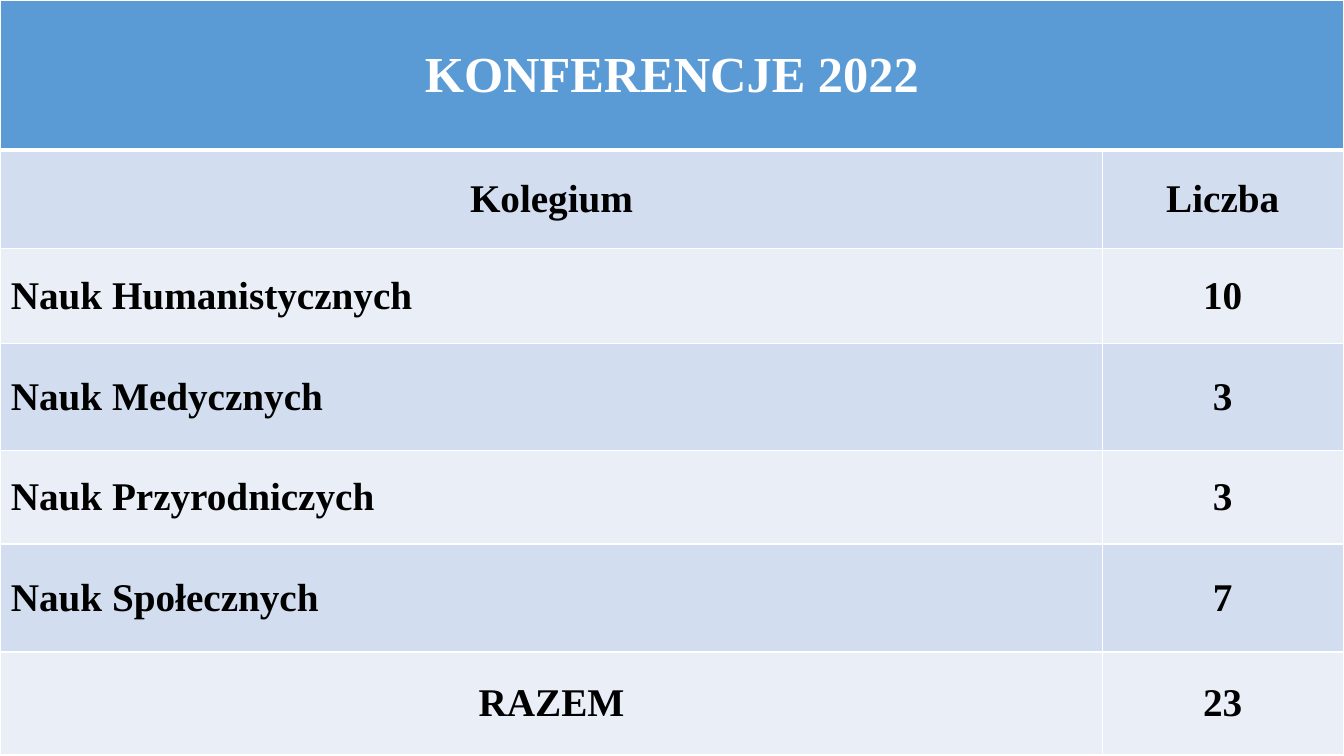
import dataclasses

import lxml.etree
import pptx
import pptx.dml.color
import pptx.enum.text
import pptx.oxml.ns
import pptx.util


@dataclasses.dataclass(frozen=True)
class Theme:
    """Colours, font and sizes of the slide."""
    font: str = "Times New Roman"
    title_size: int = 36
    body_size: int = 28
    title_fill: str = "5B9BD5"
    band_fills: tuple = ("D2DEEF", "EAEFF7")
    title_text: str = "FFFFFF"
    body_text: str = "000000"
    border: str = "FFFFFF"
    thin_border: int = 1
    thick_border: int = 3


THEME = Theme()
TITLE = "KONFERENCJE 2022"
ROWS = [
    ("Kolegium", "Liczba"),
    ("Nauk Humanistycznych", "10"),
    ("Nauk Medycznych", "3"),
    ("Nauk Przyrodniczych", "3"),
    ("Nauk Społecznych", "7"),
    ("RAZEM", "23"),
]
COLUMN_SHARES = (10.93, 2.39)
ROW_SHARES = (1.49, 0.98, 0.94, 1.06, 0.93, 1.07, 1.02)


def set_borders(cell, top, bottom):
    """Draw the four borders of a cell, with top and bottom widths in points."""
    properties = cell._tc.get_or_add_tcPr()
    widths = {"lnL": THEME.thin_border, "lnR": THEME.thin_border, "lnT": top, "lnB": bottom}
    for tag, width in widths.items():
        line = lxml.etree.SubElement(properties, pptx.oxml.ns.qn(f"a:{tag}"), w=str(pptx.util.Pt(width)))
        fill = lxml.etree.SubElement(line, pptx.oxml.ns.qn("a:solidFill"))
        lxml.etree.SubElement(fill, pptx.oxml.ns.qn("a:srgbClr"), val=THEME.border)


def style_cell(cell, fill, color):
    """Fill a cell and centre its text vertically."""
    cell.fill.solid()
    cell.fill.fore_color.rgb = pptx.dml.color.RGBColor.from_string(fill)
    cell.vertical_anchor = pptx.enum.text.MSO_ANCHOR.MIDDLE
    for run in cell.text_frame.paragraphs[0].runs:
        run.font.name = THEME.font
        run.font.bold = True
        run.font.size = pptx.util.Pt(THEME.body_size)
        run.font.color.rgb = pptx.dml.color.RGBColor.from_string(color)


def share_lengths(parts, shares, total, attribute):
    """Divide a total length among rows or columns by their shares."""
    for part, share in zip(parts, shares):
        setattr(part, attribute, round(total * share / sum(shares)))


def add_conference_table(slide, left, top, width, height):
    """Place the conference table in the given box."""
    table = slide.shapes.add_table(len(ROW_SHARES), len(COLUMN_SHARES), left, top, width, height).table
    share_lengths(table.columns, COLUMN_SHARES, width, "width")
    share_lengths(table.rows, ROW_SHARES, height, "height")
    center = pptx.enum.text.PP_ALIGN.CENTER
    left_align = pptx.enum.text.PP_ALIGN.LEFT

    title = table.cell(0, 0)
    title.merge(table.cell(0, 1))
    title.text_frame.text = TITLE
    for column in range(len(COLUMN_SHARES)):
        cell = table.cell(0, column)
        set_borders(cell, THEME.thin_border, THEME.thick_border)
        style_cell(cell, THEME.title_fill, THEME.title_text)
    paragraph = title.text_frame.paragraphs[0]
    paragraph.alignment = center
    paragraph.runs[0].font.size = pptx.util.Pt(THEME.title_size)

    for index, values in enumerate(ROWS):
        is_heading = index == 0
        is_total = index == len(ROWS) - 1
        for column, value in enumerate(values):
            cell = table.cell(index + 1, column)
            cell.text_frame.text = value
            set_borders(cell, THEME.thick_border if is_heading else THEME.thin_border, THEME.thin_border)
            style_cell(cell, THEME.band_fills[index % 2], THEME.body_text)
            centered = column == 1 or is_heading or is_total
            cell.text_frame.paragraphs[0].alignment = center if centered else left_align


def main():
    """Build and save the presentation."""
    presentation = pptx.Presentation()
    presentation.slide_width = pptx.util.Cm(33.87)
    presentation.slide_height = pptx.util.Cm(19.05)
    slide = presentation.slides.add_slide(presentation.slide_layouts[6])
    add_conference_table(slide, pptx.util.Cm(0.02), pptx.util.Cm(0), pptx.util.Cm(33.83), pptx.util.Cm(19.02))
    presentation.save("out.pptx")


if __name__ == "__main__":
    main()
